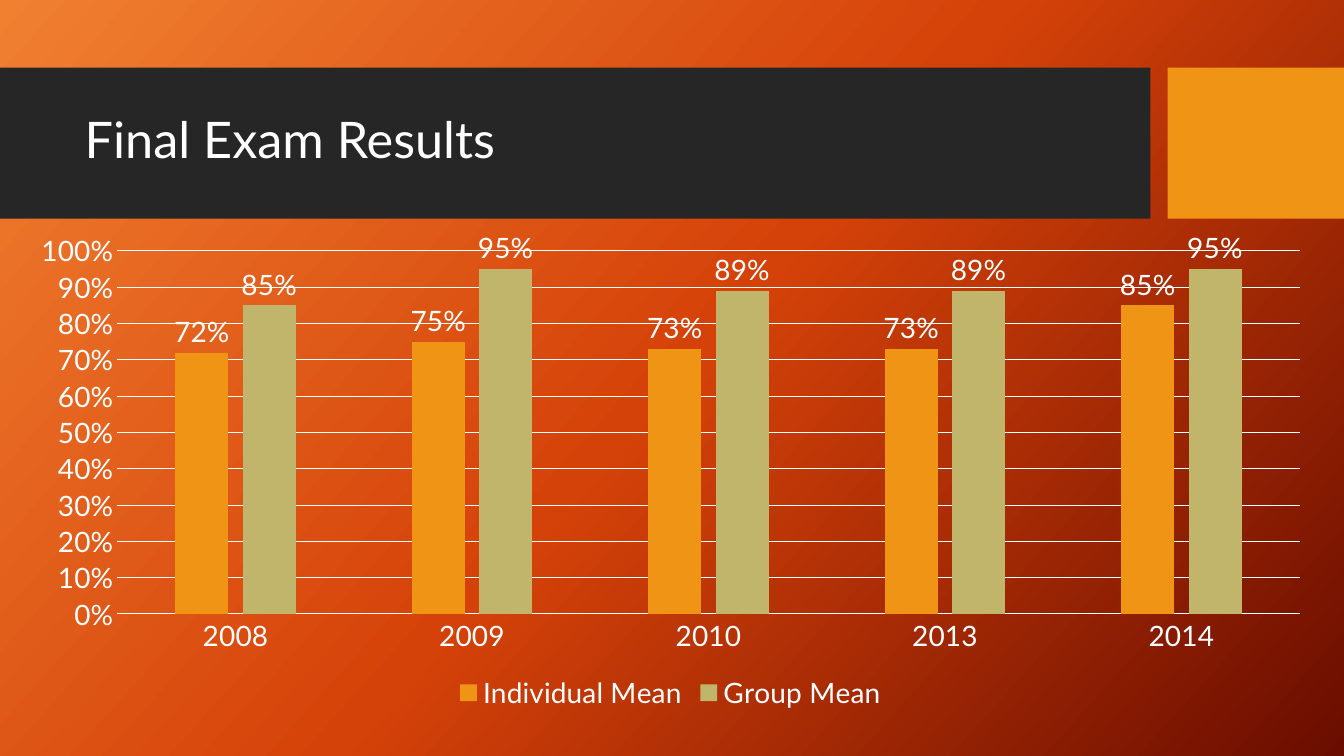
from copy import deepcopy

from pptx import Presentation
from pptx.chart.data import CategoryChartData
from pptx.dml.color import RGBColor
from pptx.enum.chart import XL_CHART_TYPE, XL_LABEL_POSITION, XL_LEGEND_POSITION, XL_TICK_MARK
from pptx.enum.shapes import MSO_SHAPE
from pptx.enum.text import MSO_ANCHOR, MSO_AUTO_SIZE, PP_ALIGN
from pptx.oxml.ns import qn
from pptx.util import Inches, Pt

COLUMNS = XL_CHART_TYPE.COLUMN_CLUSTERED
OUTSIDE = XL_LABEL_POSITION.OUTSIDE_END
BOTTOM = XL_LEGEND_POSITION.BOTTOM
NO_TICK = XL_TICK_MARK.NONE
RECT = MSO_SHAPE.RECTANGLE
MIDDLE = MSO_ANCHOR.MIDDLE
LEFT = PP_ALIGN.LEFT
NO_FIT = MSO_AUTO_SIZE.NONE

FONT = "Lato"
WIDE, HIGH = 13.33, 7.5
COLORS = {"white": "FFFFFF", "band": "262626", "amber": "F09415", "sand": "C1B56B"}
GLOW = [(0, "F18031"), (0.5, "D54209"), (1, "6A0D00")]
YEARS = ["2008", "2009", "2010", "2013", "2014"]
MEANS = [
    ("Individual Mean", "amber", [0.72, 0.75, 0.73, 0.73, 0.85]),
    ("Group Mean", "sand", [0.85, 0.95, 0.89, 0.89, 0.95]),
]


def color(name):
    return RGBColor.from_string(COLORS[name])


def style(font, size=20, tint="white"):
    font.name, font.size, font.bold = FONT, Pt(size), False
    font.color.rgb = color(tint)


def write(frame, text, size=20, tint="white", align=LEFT):
    frame.word_wrap, frame.auto_size = True, NO_FIT
    frame.vertical_anchor = MIDDLE
    line = frame.paragraphs[0]
    line.alignment, line.line_spacing = align, 0.9
    run = line.add_run()
    run.text = text
    style(run.font, size, tint)


def rule(line):
    line.color.rgb = color("white")
    line.width = Pt(0.75)


def backdrop(slide):
    fill = slide.background.fill
    fill.gradient()
    fill.gradient_angle = 360 - 42
    stops = slide.element.find(".//" + qn("a:gsLst"))
    stops.append(deepcopy(stops[0]))
    for stop, (place, tint) in zip(fill.gradient_stops, GLOW):
        stop.position = place
        stop.color.rgb = RGBColor.from_string(tint)


def block(slide, box, tint):
    shape = slide.shapes.add_shape(RECT, *map(Inches, box))
    shape.shadow.inherit = False
    shape.fill.solid()
    shape.fill.fore_color.rgb = color(tint)
    shape.line.fill.background()


def header(slide, box, text):
    """Dark title band with an amber block at its right end."""
    left, top, width, height = box
    tail, gap = 1.75, 0.17
    band = width - tail - gap
    block(slide, (left, top, band, height), "band")
    block(slide, (left + width - tail, top, tail, height), "amber")
    title = slide.shapes.title
    title.left, title.top = Inches(left + 0.74), Inches(top + 0.15)
    title.width, title.height = Inches(band - 0.9), Inches(height - 0.32)
    write(title.text_frame, text, size=36)
    # Bring the title in front of the band
    slide.shapes.element.append(title.element)


def results(slide, box):
    data = CategoryChartData(number_format="0%")
    data.categories = YEARS
    for name, _, values in MEANS:
        data.add_series(name, values)
    chart = slide.shapes.add_chart(COLUMNS, *map(Inches, box), data).chart
    style(chart.font)
    chart.has_title = False
    chart.has_legend = True
    chart.legend.position = BOTTOM
    chart.legend.include_in_layout = False
    style(chart.legend.font)

    for axis in (chart.category_axis, chart.value_axis):
        axis.major_tick_mark = axis.minor_tick_mark = NO_TICK
        style(axis.tick_labels.font)
    rule(chart.category_axis.format.line)
    scale = chart.value_axis
    scale.minimum_scale, scale.maximum_scale, scale.major_unit = 0, 1, 0.1
    scale.format.line.fill.background()
    rule(scale.major_gridlines.format.line)
    scale.tick_labels.number_format = "0%"
    scale.tick_labels.number_format_is_linked = False

    plot = chart.plots[0]
    plot.gap_width, plot.overlap, plot.vary_by_categories = 219, -27, False
    for series, (_, tint, _) in zip(plot.series, MEANS):
        series.format.fill.solid()
        series.format.fill.fore_color.rgb = color(tint)
        labels = series.data_labels
        labels.show_value = True
        labels.position = OUTSIDE
        style(labels.font)


def main():
    deck = Presentation()
    deck.slide_width, deck.slide_height = Inches(WIDE), Inches(HIGH)
    slide = deck.slides.add_slide(deck.slide_layouts[5])
    backdrop(slide)
    header(slide, (0, 0.67, WIDE, 1.5), "Final Exam Results")
    results(slide, (0.15, 2.22, 13, 4.88))
    deck.save("out.pptx")


if __name__ == "__main__":
    main()
